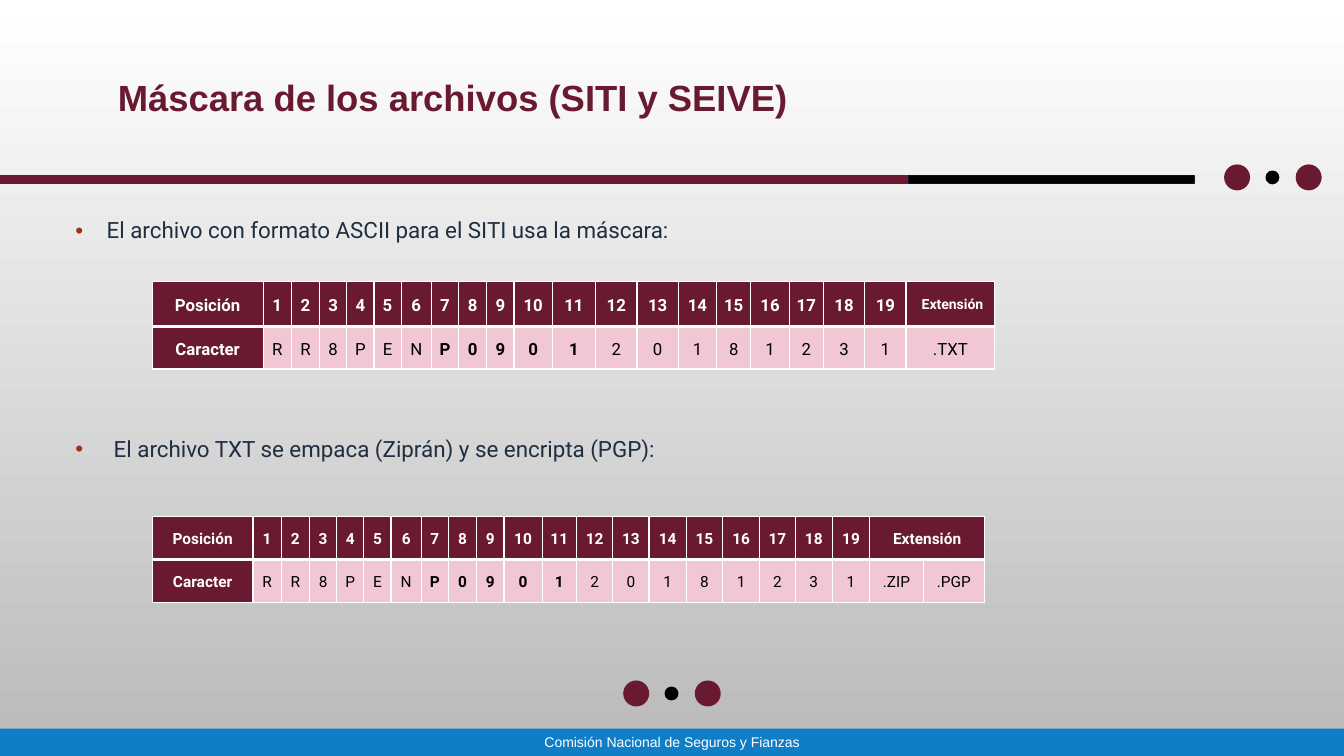
from dataclasses import dataclass

from lxml import etree
from pptx import Presentation
from pptx import util as u
from pptx.dml import color
from pptx.enum import shapes, text
from pptx.oxml import ns


@dataclass(frozen=True)
class Theme:
    """Colours, fonts and type sizes of the slide."""
    wine: str = "691A31"
    pink: str = "F1C7D3"
    blue: str = "107EC6"
    navy: str = "1F2E41"
    edge: str = "0B0F2B"
    rust: str = "9E301A"
    black: str = "000000"
    white: str = "FFFFFF"
    grey: str = "B9B9B9"
    heading: str = "Arial"
    body: str = "Roboto"
    title_size: int = 26
    bullet_size: int = 16
    small_size: int = 10


THEME = Theme()
POSITIONS = [str(number) for number in range(1, 20)]
MASK = list("RR8PENP090120181231")
BOLD_COLUMNS = range(7, 12)
DIGIT_WIDTHS = [0.28, 0.28, 0.27, 0.27, 0.27, 0.3, 0.27, 0.28, 0.27, 0.38]
TEXT_MASK_WIDTHS = [1.1, *DIGIT_WIDTHS, 0.43, 0.41, 0.41, 0.38, 0.34, 0.38, 0.34, 0.41, 0.41, 0.88]
PACKED_MASK_WIDTHS = [1, *DIGIT_WIDTHS, 0.34, 0.36, 0.36, 0.37, 0.36, 0.37, 0.35, 0.37, 0.37, 0.53, 0.61]


def rgb(value):
    """Return a colour from its hex code."""
    return color.RGBColor.from_string(value)


def inches(*lengths):
    """Convert lengths to Inches."""
    return [u.Inches(length) for length in lengths]


def set_font(paragraph, name, size, ink, bold=False):
    """Format a whole paragraph."""
    font = paragraph.font
    font.name, font.size, font.bold = name, u.Pt(size), bold
    font.color.rgb = rgb(ink)


def add_block(page, kind, box, fill, line=None):
    """Add a flat filled shape."""
    block = page.shapes.add_shape(kind, *inches(*box))
    block.shadow.inherit = False
    block.fill.solid()
    block.fill.fore_color.rgb = rgb(fill)
    if line:
        block.line.color.rgb = rgb(line)
        block.line.width = u.Pt(1.25)
    else:
        block.line.fill.background()
    return block


def paint_background(page):
    """Fade the page from white down to grey."""
    fill = page.background.fill
    fill.gradient()
    fill.gradient_angle = 270
    for stop, shade in zip(fill.gradient_stops, (THEME.white, THEME.grey)):
        stop.color.rgb = rgb(shade)


def place_title(page, box):
    """Place the slide title in its box."""
    title = page.shapes.title
    title.left, title.top, title.width, title.height = inches(*box)
    frame = title.text_frame
    frame.text = "Máscara de los archivos (SITI y SEIVE)"
    frame.auto_size = text.MSO_AUTO_SIZE.NONE
    frame.vertical_anchor = text.MSO_ANCHOR.MIDDLE
    frame.paragraphs[0].alignment = text.PP_ALIGN.CENTER
    set_font(frame.paragraphs[0], THEME.heading, THEME.title_size, THEME.wine, True)


def add_footer(page, box):
    """Add the footer band with the institution's name."""
    frame = add_block(page, shapes.MSO_SHAPE.RECTANGLE, box, THEME.blue).text_frame
    frame.text = "Comisión Nacional de Seguros y Fianzas"
    frame.vertical_anchor = text.MSO_ANCHOR.MIDDLE
    frame.paragraphs[0].alignment = text.PP_ALIGN.CENTER
    set_font(frame.paragraphs[0], THEME.heading, THEME.small_size, THEME.white)


def add_bullets(page, box):
    """Add the two statements, spaced to leave room for a table."""
    frame = page.shapes.add_textbox(*inches(*box)).text_frame
    frame.word_wrap = True
    bullets = [
        ("El archivo con formato ASCII para el SITI usa la máscara:", 0.31, 0),
        ("El archivo TXT se empaca (Ziprán) y se encripta (PGP):", 0.38, 139),
    ]
    for index, (statement, indent, gap) in enumerate(bullets):
        paragraph = frame.add_paragraph() if index else frame.paragraphs[0]
        paragraph.text = statement
        paragraph.alignment = text.PP_ALIGN.JUSTIFY
        paragraph.line_spacing = 0.9
        paragraph.space_before = u.Pt(gap)
        properties = paragraph._p.get_or_add_pPr()
        properties.set("marL", str(u.Inches(indent)))
        properties.set("indent", str(-u.Inches(indent)))
        bullet_color = etree.SubElement(properties, ns.qn("a:buClr"))
        etree.SubElement(bullet_color, ns.qn("a:srgbClr"), val=THEME.rust)
        etree.SubElement(properties, ns.qn("a:buFont"), typeface="Arial")
        etree.SubElement(properties, ns.qn("a:buChar"), char="•")
        set_font(paragraph, THEME.body, THEME.bullet_size, THEME.navy)


def set_borders(cell, bottom):
    """Draw white cell borders, with the given bottom width in points."""
    properties = cell._tc.get_or_add_tcPr()
    for side, width in (("L", 1), ("R", 1), ("T", 1), ("B", bottom)):
        line = etree.SubElement(properties, ns.qn(f"a:ln{side}"), w=str(u.Pt(width)))
        fill = etree.SubElement(line, ns.qn("a:solidFill"))
        etree.SubElement(fill, ns.qn("a:srgbClr"), val=THEME.white)


def format_cell(cell, row, column, size):
    """Format a mask cell according to its row and column."""
    dark = row == 0 or column == 0
    set_borders(cell, 3 if row == 0 else 1)
    cell.fill.solid()
    cell.fill.fore_color.rgb = rgb(THEME.wine if dark else THEME.pink)
    cell.vertical_anchor = text.MSO_ANCHOR.MIDDLE
    cell.margin_left = cell.margin_right = u.Inches(0.05)
    cell.margin_top = cell.margin_bottom = 0
    paragraph = cell.text_frame.paragraphs[0]
    paragraph.alignment = text.PP_ALIGN.CENTER
    paragraph.line_spacing = 1.15
    paragraph.space_after = u.Pt(10)
    ink = THEME.white if dark else THEME.black
    set_font(paragraph, THEME.body, size, ink, dark or column in BOLD_COLUMNS)


def add_mask_table(page, corner, widths, heights, extensions, size):
    """Add a file mask table and return it."""
    rows = [["Posición", *POSITIONS, "Extensión"], ["Caracter", *MASK, *extensions]]
    table = page.shapes.add_table(
        2, len(widths), *inches(*corner, sum(widths), sum(heights))).table
    table.first_row = table.horz_banding = False
    for column, width in zip(table.columns, widths):
        column.width = u.Inches(width)
    for row, height in zip(table.rows, heights):
        row.height = u.Inches(height)
    for row, labels in enumerate(rows):
        for column in range(len(widths)):
            cell = table.cell(row, column)
            if column < len(labels):
                cell.text = labels[column]
            format_cell(cell, row, column, size)
    if len(extensions) > 1:
        table.cell(0, len(POSITIONS) + 1).merge(table.cell(0, len(widths) - 1))
    for column in range(len(POSITIONS) + 1, len(widths)):
        paragraph = table.cell(1, column).text_frame.paragraphs[0]
        paragraph.space_after = u.Pt(6 if len(extensions) > 1 else 10)
    return table


def add_rule(page, left, top):
    """Add the two-coloured rule below the title."""
    for offset, width, fill, line in ((0, 9, THEME.wine, THEME.wine),
                                      (9.01, 2.83, THEME.black, THEME.edge)):
        add_block(page, shapes.MSO_SHAPE.RECTANGLE, (left + offset, top, width, 0.08), fill, line)


def add_dots(page, left, top):
    """Add a small black dot between two wine dots."""
    for x, y, size, fill in ((0, 0, 0.24, THEME.wine), (0.41, 0.06, 0.12, THEME.black),
                             (0.71, 0, 0.24, THEME.wine)):
        add_block(page, shapes.MSO_SHAPE.OVAL, (left + x, top + y, size, size), fill, fill)


def main():
    """Build and save the slide."""
    deck = Presentation()
    deck.slide_width, deck.slide_height = inches(13.33, 7.5)
    page = deck.slides.add_slide(deck.slide_layouts.get_by_name("Title Only"))
    paint_background(page)
    place_title(page, (0, 0.59, 8.99, 0.74))
    add_footer(page, (0, 7.23, 13.33, 0.27))
    add_bullets(page, (0.65, 2.13, 11.87, 4.38))
    text_mask = add_mask_table(page, (1.51, 2.79), TEXT_MASK_WIDTHS, (0.45, 0.42), [".TXT"], 12)
    extension = text_mask.cell(0, len(POSITIONS) + 1)
    extension.margin_left = u.Inches(0.09)
    extension.text_frame.paragraphs[0].font.size = u.Pt(THEME.small_size)
    add_mask_table(page, (1.51, 5.12), PACKED_MASK_WIDTHS, (0.43, 0.43), [".ZIP", ".PGP"], 11)
    add_rule(page, 0, 1.74)
    add_dots(page, 12.15, 1.64)
    add_dots(page, 6.19, 6.76)
    deck.save("out.pptx")


if __name__ == "__main__":
    main()
